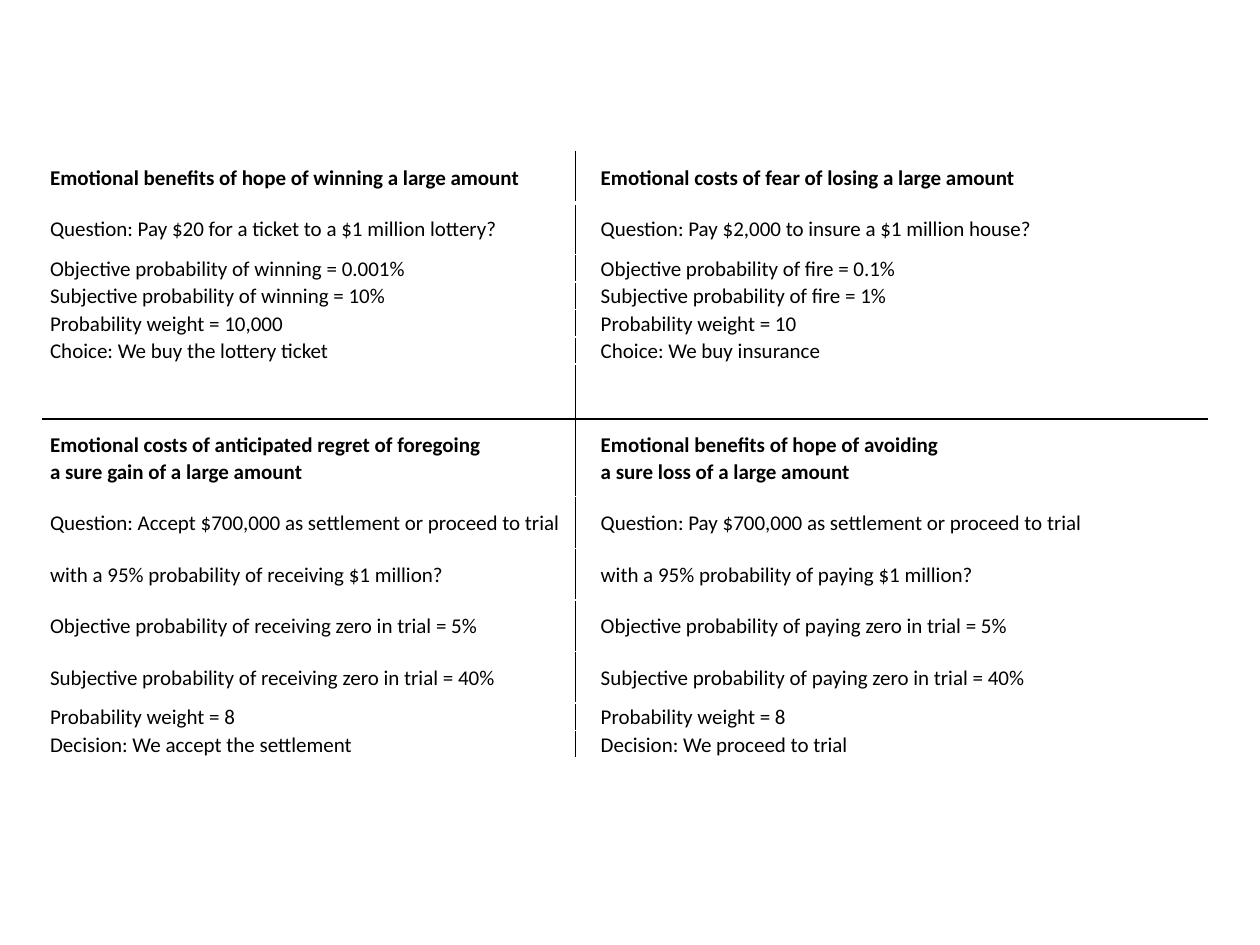
from lxml.etree import SubElement
from pptx import Presentation
from pptx.dml.color import RGBColor
from pptx.enum.text import MSO_ANCHOR as Anchor
from pptx.oxml import parse_xml
from pptx.oxml.ns import nsdecls, qn
from pptx.util import Cm, Pt

BLACK, WHITE = "000000", "FFFFFF"
INDENT = Cm(0.36)
COLUMN_WIDTHS = (10.74, 6.2, 6.53)
TALL, SHORT, DOUBLE = 1.04, 0.55, 1.57
WIN_ROWS = [
    (TALL, "Emotional benefits of hope of winning a large amount",
     "Emotional costs of fear of losing a large amount"),
    (TALL, "Question: Pay $20 for a ticket to a $1 million lottery?",
     "Question: Pay $2,000 to insure a $1 million house?"),
    (SHORT, "Objective probability of winning = 0.001%", "Objective probability of fire = 0.1%"),
    (SHORT, "Subjective probability of winning = 10%", "Subjective probability of fire = 1%"),
    (SHORT, "Probability weight = 10,000", "Probability weight = 10"),
    (SHORT, "Choice: We buy the lottery ticket", "Choice: We buy insurance"),
]
SPACER_ROWS = [(SHORT, "", "")] * 2
TRIAL_ROWS = [
    (DOUBLE, "Emotional costs of anticipated regret of foregoing\na sure gain of a large amount",
     "Emotional benefits of hope of avoiding\na sure loss of a large amount"),
    (TALL, "Question: Accept $700,000 as settlement or proceed to trial",
     "Question: Pay $700,000 as settlement or proceed to trial"),
    (TALL, "with a 95% probability of receiving $1 million?",
     "with a 95% probability of paying $1 million?"),
    (TALL, "Objective probability of receiving zero in trial = 5%",
     "Objective probability of paying zero in trial = 5%"),
    (TALL, "Subjective probability of receiving zero in trial = 40%",
     "Subjective probability of paying zero in trial = 40%"),
    (SHORT, "Probability weight = 8", "Probability weight = 8"),
    (SHORT, "Decision: We accept the settlement", "Decision: We proceed to trial"),
]
ROWS = WIN_ROWS + SPACER_ROWS + TRIAL_ROWS
FIRST_SPACER = len(WIN_ROWS)
SECOND_HEADING = FIRST_SPACER + len(SPACER_ROWS)


def rgb(color):
    """Turn a hex string into a colour."""
    return RGBColor.from_string(color)


def apply(target, values):
    """Set each named attribute of the target."""
    for name, value in values.items():
        setattr(target, name, value)


def set_borders(cell, borders):
    """Draw cell edges from a dict of side to (colour or None, points)."""
    properties = cell._tc.get_or_add_tcPr()
    for place, side in enumerate("LRTB"):
        color, width = borders[side]
        paint = (f'<a:solidFill><a:srgbClr val="{color}"/></a:solidFill>'
                 if color else "<a:noFill/>")
        properties.insert(place, parse_xml(
            f'<a:ln{side} {nsdecls("a")} w="{Pt(width)}">{paint}</a:ln{side}>'))


def row_borders(row, column):
    """Give the edges of a cell: a black cross on white rules."""
    top = bottom = (WHITE, 1)
    if row == 0:
        bottom = (WHITE, 3)
    elif row == 1:
        top = (WHITE, 3)
    elif row == FIRST_SPACER:
        bottom = (None, 1)
    elif row == FIRST_SPACER + 1:
        top, bottom = (None, 1), (BLACK, 1)
    elif row == SECOND_HEADING:
        top = (BLACK, 1)
    return {"L": (BLACK if column == 1 else WHITE, 1),
            "R": (BLACK if column == 0 else WHITE, 1), "T": top, "B": bottom}


def write_cell(cell, text, bold, indent):
    """Write the lines of a cell and format them."""
    apply(cell, {"vertical_anchor": Anchor.MIDDLE, "margin_left": Cm(0.15),
                 "margin_right": Cm(0.15), "margin_top": 0, "margin_bottom": 0})
    cell.text = text
    for para in cell.text_frame.paragraphs:
        para.line_spacing = 1.07
        para._p.get_or_add_pPr().set("indent", str(indent))
        for span in para.runs:
            apply(span.font, {"name": "Calibri", "size": Pt(12), "bold": bold})
            span.font.color.rgb = rgb(BLACK)
        if not para.runs:
            SubElement(para._p, qn("a:endParaRPr")).set("sz", "1200")


def add_fourfold_table(page, left, top, widths, rows):
    """Place the four-part table with its top left corner at the given point."""
    frame = page.shapes.add_table(len(rows), len(widths), Cm(left), Cm(top),
                                  Cm(sum(widths)), Cm(sum(row[0] for row in rows)))
    table = frame.table
    apply(table, {"first_row": False, "horz_banding": False})
    for column, width in zip(table.columns, widths):
        column.width = Cm(width)
    for index, (height, *texts) in enumerate(rows):
        table.rows[index].height = Cm(height)
        bold = index in (0, SECOND_HEADING)
        for column, text in enumerate([*texts, ""]):
            cell = table.cell(index, column)
            write_cell(cell, text, bold, INDENT if column else 0)
            cell.fill.background()
            set_borders(cell, row_borders(index, column))
        if texts[0]:
            table.cell(index, 1).merge(table.cell(index, 2))


def main():
    """Build the deck and save it."""
    deck = Presentation()
    apply(deck, {"slide_width": Cm(25.4), "slide_height": Cm(19.05)})
    page = deck.slides.add_slide(deck.slide_layouts[6])
    add_fourfold_table(page, 0.86, 3.05, COLUMN_WIDTHS, ROWS)
    deck.save("out.pptx")


if __name__ == "__main__":
    main()
